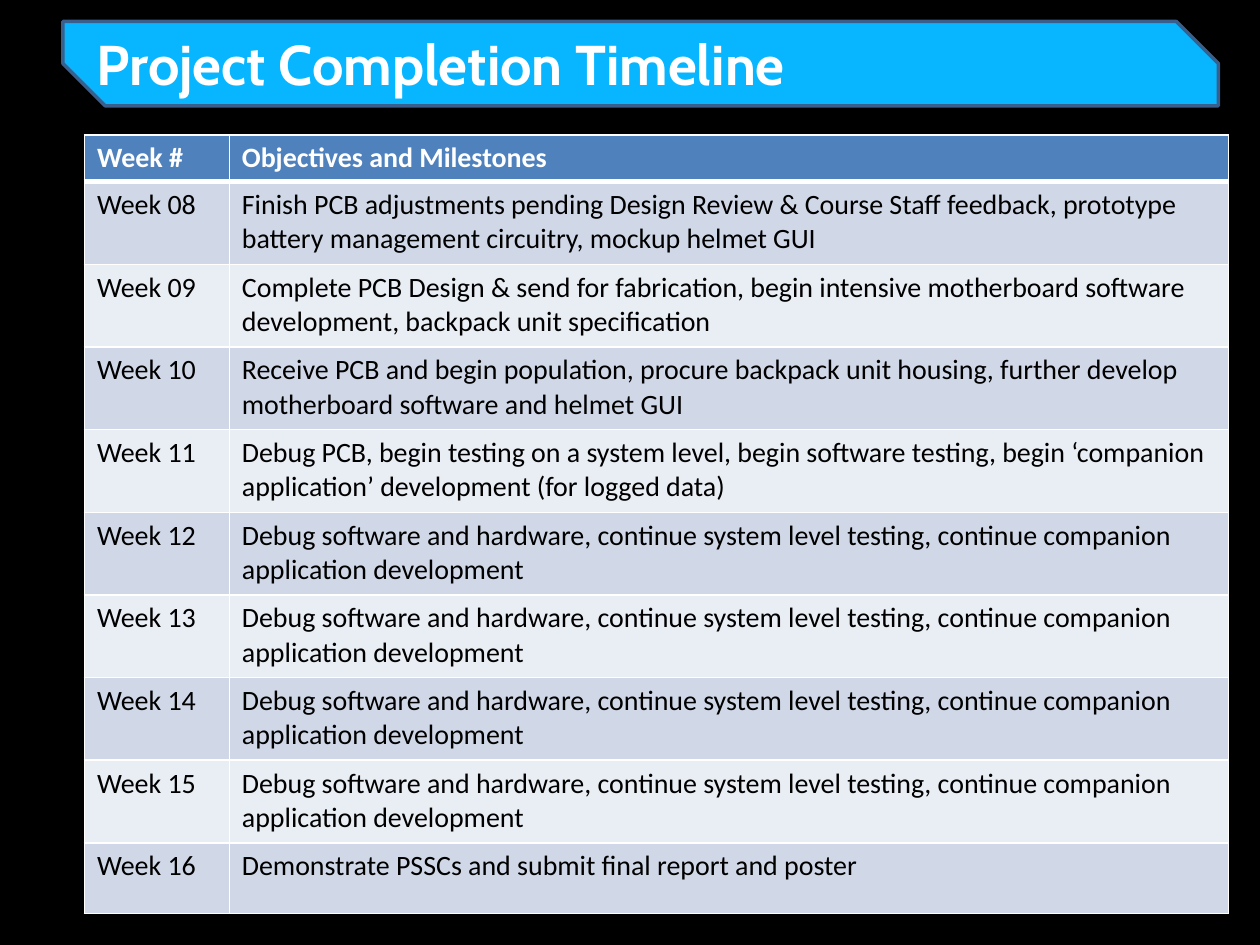
import pptx
import pptx.dml.color
import pptx.enum.shapes
import pptx.enum.text
import pptx.oxml.ns
import pptx.util
from lxml import etree

RGB = pptx.dml.color.RGBColor
BLACK = RGB(0x00, 0x00, 0x00)
WHITE = RGB(0xFF, 0xFF, 0xFF)
CYAN = RGB(0x07, 0xB6, 0xFE)
NAVY = RGB(0x3A, 0x5F, 0x8C)
BLUE = RGB(0x4F, 0x81, 0xBD)
BANDS = [RGB(0xD0, 0xD8, 0xE8), RGB(0xE9, 0xED, 0xF4)]

WIDE, HIGH = 10, 7.5
HEAD = ("Week #", "Objectives and Milestones")
DEBUG = ("Debug software and hardware, continue system level testing, "
         "continue companion application development")
GOALS = [
    "Finish PCB adjustments pending Design Review & Course Staff feedback, "
    "prototype battery management circuitry, mockup helmet GUI",
    "Complete PCB Design & send for fabrication, begin intensive motherboard "
    "software development, backpack unit specification",
    "Receive PCB and begin population, procure backpack unit housing, further "
    "develop motherboard software and helmet GUI",
    "Debug PCB, begin testing on a system level, begin software testing, begin "
    "‘companion application’ development (for logged data)",
    *[DEBUG] * 4,
    "Demonstrate PSSCs and submit final report and poster",
]
FIRST = 8  # number of the first week


def write(frame, text, font="Calibri", size=16, color=BLACK, bold=False):
    para = frame.paragraphs[0]
    para.alignment = pptx.enum.text.PP_ALIGN.LEFT
    run = para.add_run()
    run.text = text
    run.font.name = font
    run.font.size = pptx.util.Pt(size)
    run.font.color.rgb = color
    run.font.bold = bold


def edge(cell, **sides):
    """Draw white cell borders; widths in points, keyed by side."""
    props = cell._tc.get_or_add_tcPr()
    for side in "LRTB":
        width = pptx.util.Pt(sides.get(side, 1))
        line = etree.SubElement(props, pptx.oxml.ns.qn("a:ln" + side), w=str(width))
        fill = etree.SubElement(line, pptx.oxml.ns.qn("a:solidFill"))
        etree.SubElement(fill, pptx.oxml.ns.qn("a:srgbClr"), val=str(WHITE))


def banner(slide, box, text):
    shape = slide.shapes.add_shape(
        pptx.enum.shapes.MSO_SHAPE.SNIP_2_DIAG_RECTANGLE,
        *map(pptx.util.Inches, box))
    shape.adjustments[0] = 0
    shape.adjustments[1] = 0.5
    shape.shadow.inherit = False
    shape.fill.solid()
    shape.fill.fore_color.rgb = CYAN
    shape.line.color.rgb = NAVY
    shape.line.width = pptx.util.Pt(2)
    shape.text_frame.vertical_anchor = pptx.enum.text.MSO_ANCHOR.MIDDLE
    write(shape.text_frame, text, font="Cabin", size=32, color=WHITE, bold=True)


def plan(slide, box, rows):
    left, top, wide, high = box
    table = slide.shapes.add_table(
        len(rows), 2, *map(pptx.util.Inches, box)).table

    # Narrow week column; short first and last rows, equal rows between
    week, head, last = 1.15, 0.37, 0.56
    body = (high - head - last) / (len(rows) - 2)
    for col, size in zip(table.columns, (week, wide - week)):
        col.width = pptx.util.Inches(size)
    for row, size in zip(table.rows, [head, *[body] * (len(rows) - 2), last]):
        row.height = pptx.util.Inches(size)

    for r, texts in enumerate(rows):
        top_row = r == 0
        for c, text in enumerate(texts):
            cell = table.cell(r, c)
            edge(cell, T=3 if r == 1 else 1, B=3 if top_row else 1)
            cell.fill.solid()
            cell.fill.fore_color.rgb = BLUE if top_row else BANDS[(r - 1) % 2]
            write(cell.text_frame, text, bold=top_row,
                  color=WHITE if top_row else BLACK)


def main():
    deck = pptx.Presentation()
    deck.slide_width = pptx.util.Inches(WIDE)
    deck.slide_height = pptx.util.Inches(HIGH)
    slide = deck.slides.add_slide(deck.slide_layouts[6])
    slide.background.fill.solid()
    slide.background.fill.fore_color.rgb = BLACK

    # Title banner
    banner(slide, (0.5, 0.17, 9.17, 0.67), "Project Completion Timeline")

    # Weekly timeline
    weeks = [(f"Week {n:02}", goal) for n, goal in enumerate(GOALS, FIRST)]
    plan(slide, (0.67, 1.07, 9.08, 6.18), [HEAD, *weeks])

    deck.save("out.pptx")


if __name__ == "__main__":
    main()
